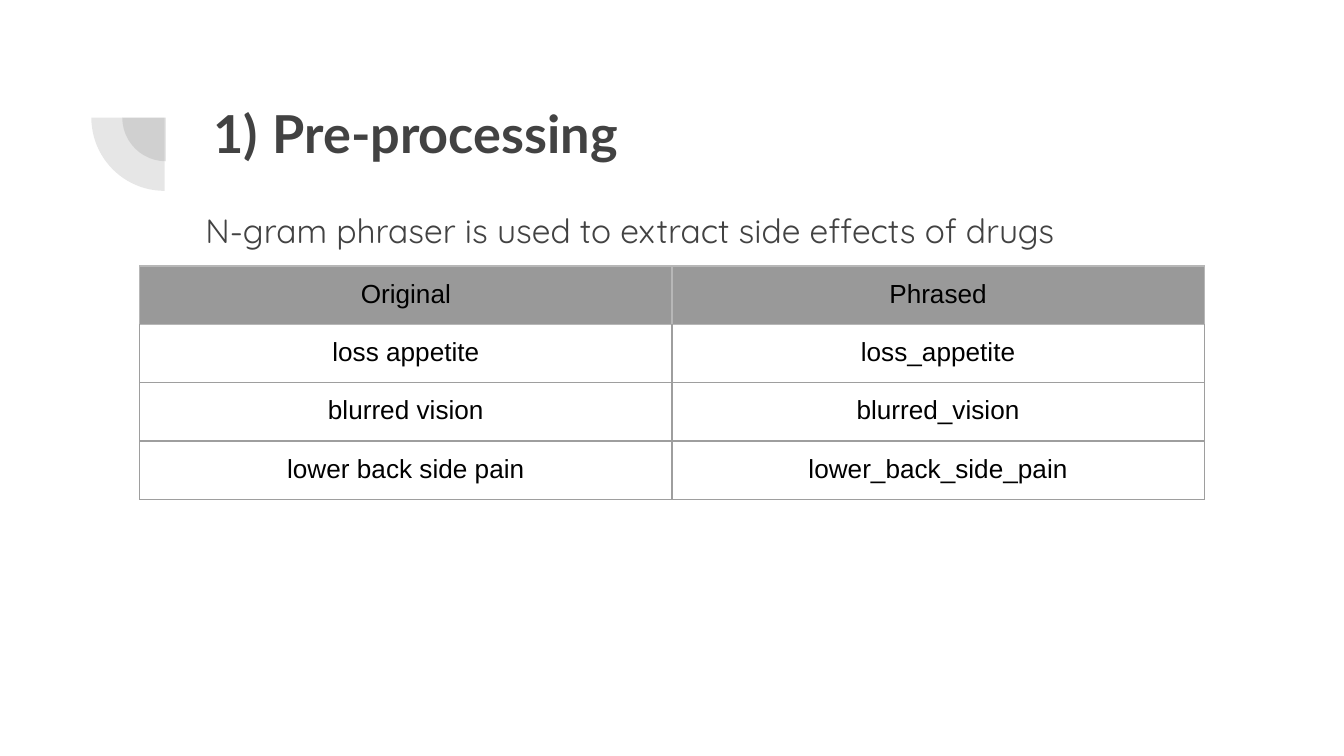
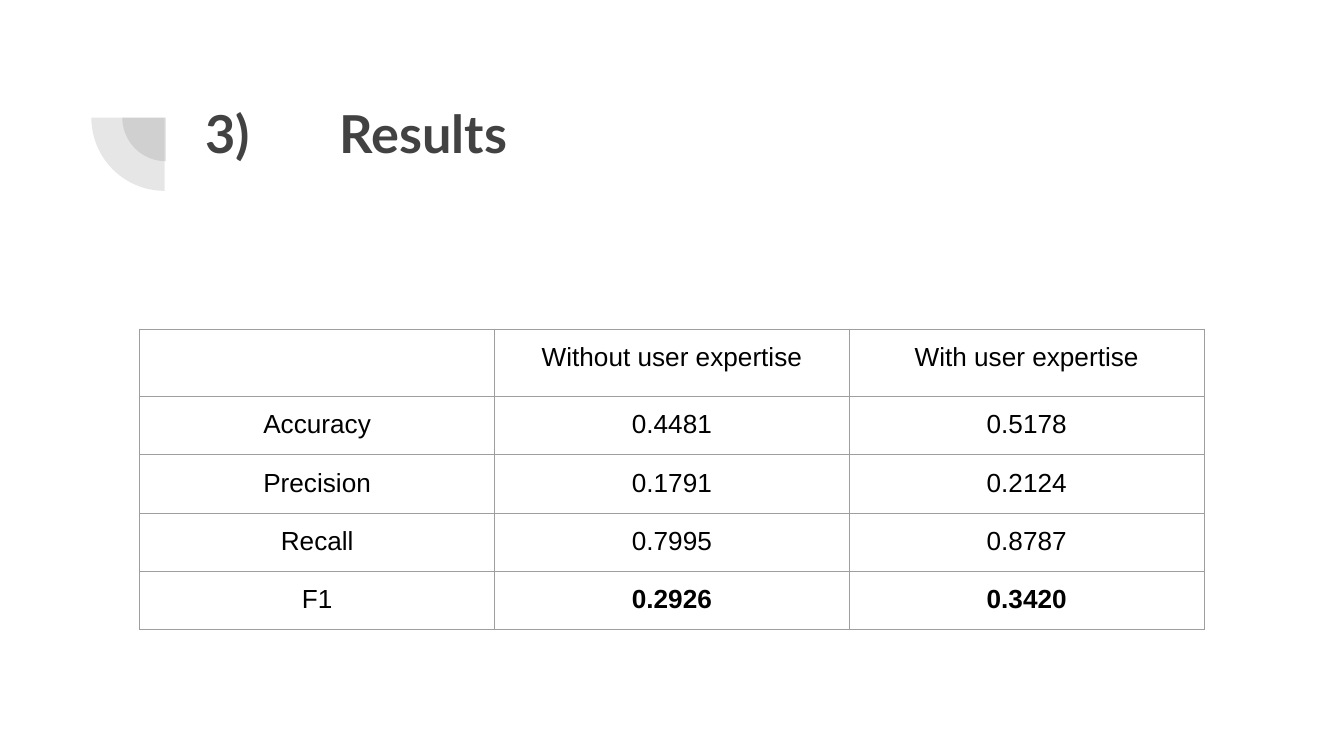
from lxml import etree
from pptx import Presentation
from pptx.dml.color import RGBColor
from pptx.enum.shapes import MSO_SHAPE
from pptx.enum.text import MSO_ANCHOR, PP_ALIGN
from pptx.oxml.ns import qn
from pptx.util import Inches, Pt

PIE = MSO_SHAPE.PIE
TOP = MSO_ANCHOR.TOP
CENTER = PP_ALIGN.CENTER

INK = RGBColor(0x42, 0x42, 0x42)
BLACK = RGBColor(0x00, 0x00, 0x00)
HEADER_FILL = RGBColor(0x99, 0x99, 0x99)
HEADER_BORDER = RGBColor(0xB7, 0xB7, 0xB7)
BORDER = RGBColor(0x9E, 0x9E, 0x9E)

PHRASES = [
    ("Original", "Phrased"),
    ("loss appetite", "loss_appetite"),
    ("blurred vision", "blurred_vision"),
    ("lower back side pain", "lower_back_side_pain"),
]
SCORES = [
    ("", "Without user expertise", "With user expertise"),
    ("Accuracy", "0.4481", "0.5178"),
    ("Precision", "0.1791", "0.2124"),
    ("Recall", "0.7995", "0.8787"),
    ("F1", "0.2926", "0.3420"),
]
BOLD_SCORES = {"0.2926", "0.3420"}

SLIDE_WIDTH = 10
TEXT_LEFT, TEXT_WIDTH = 1.43, 7.69
TABLE_LEFT, TABLE_WIDTH, ROW_HEIGHT = 1.04, 7.92, 5 / 12
TABLE_FONT, TABLE_SIZE, EMPTY_CELL_SIZE = "Arial", 14, 18
INSET = Inches(0.1)
PIES = [(0.91, 0.55, 0.65), (0.68, 0.33, 1.09)]  # left, top, diameter


def set_insets(target):
    """Give a text frame or a table cell the same margin on all sides."""
    target.margin_left = target.margin_right = INSET
    target.margin_top = target.margin_bottom = INSET


def add_run(paragraph, text, size, font_name, color, bold=False):
    run = paragraph.add_run()
    run.text = text
    run.font.size = Pt(size)
    run.font.name = font_name
    run.font.color.rgb = color
    run.font.bold = bold


def add_text(slide, top, height, text, size, font_name, bold=False):
    box = slide.shapes.add_textbox(
        Inches(TEXT_LEFT), Inches(top), Inches(TEXT_WIDTH), Inches(height))
    frame = box.text_frame
    frame.word_wrap = True
    frame.vertical_anchor = TOP
    set_insets(frame)
    paragraph = frame.paragraphs[0]
    add_run(paragraph, text, size, font_name, INK, bold)
    return paragraph


def number_paragraph(paragraph):
    """Number the paragraph 1), with a hanging indent."""
    properties = paragraph._p.get_or_add_pPr()
    properties.set("marL", str(Inches(0.5)))
    properties.set("indent", str(Inches(-0.44)))
    bullet_color = etree.SubElement(properties, qn("a:buClr"))
    etree.SubElement(bullet_color, qn("a:srgbClr"), val=str(INK))
    etree.SubElement(properties, qn("a:buAutoNum"), type="arabicParenR")


def add_tab_stop(paragraph, position):
    properties = paragraph._p.get_or_add_pPr()
    stops = etree.SubElement(properties, qn("a:tabLst"))
    etree.SubElement(stops, qn("a:tab"), pos=str(Inches(position)), algn="l")


def set_end_font(paragraph, size, font_name):
    """Set the font of the paragraph mark, which sets an empty line's height."""
    mark = etree.SubElement(
        paragraph._p, qn("a:endParaRPr"), sz=str(size * 100))
    etree.SubElement(mark, qn("a:latin"), typeface=font_name)


def add_corner_arcs(slide):
    group = slide.shapes.add_group_shape()
    for left, top, diameter in PIES:
        arc = group.shapes.add_shape(
            PIE, Inches(left), Inches(top), Inches(diameter), Inches(diameter))
        arc.adjustments[0], arc.adjustments[1] = 108, 162
        arc.rotation = 270
        arc.shadow.inherit = False
        arc.line.fill.background()
        arc.fill.solid()
        arc.fill.fore_color.rgb = INK
        color = arc._element.spPr.find(qn("a:solidFill"))[0]
        etree.SubElement(color, qn("a:alpha"), val="13000")


def set_borders(cell, side_color, top_color, bottom_color):
    properties = cell._tc.get_or_add_tcPr()
    sides = {"lnL": side_color, "lnR": side_color,
             "lnT": top_color, "lnB": bottom_color}
    for side, color in sides.items():
        line = etree.SubElement(properties, qn(f"a:{side}"), w=str(Pt(0.75)))
        fill = etree.SubElement(line, qn("a:solidFill"))
        etree.SubElement(fill, qn("a:srgbClr"), val=str(color))


def fill_cell(cell, value, fill_color):
    set_insets(cell)
    if fill_color:
        cell.fill.solid()
        cell.fill.fore_color.rgb = fill_color
    else:
        cell.fill.background()
    paragraph = cell.text_frame.paragraphs[0]
    if value:
        paragraph.alignment = CENTER
        add_run(paragraph, value, TABLE_SIZE, TABLE_FONT, BLACK,
                value in BOLD_SCORES)
    set_end_font(paragraph, TABLE_SIZE if value else EMPTY_CELL_SIZE,
                 TABLE_FONT)


def add_table(slide, top, rows, shaded_header=False):
    column_count = len(rows[0])
    table = slide.shapes.add_table(
        len(rows), column_count, Inches(TABLE_LEFT), Inches(top),
        Inches(TABLE_WIDTH), Inches(ROW_HEIGHT * len(rows))).table
    table.first_row = table.horz_banding = False
    for column in table.columns:
        column.width = Inches(TABLE_WIDTH / column_count)
    header_border = HEADER_BORDER if shaded_header else BORDER
    for row_index, values in enumerate(rows):
        table.rows[row_index].height = Inches(ROW_HEIGHT)
        is_header = row_index == 0
        own_border = header_border if is_header else BORDER
        top_border = header_border if row_index <= 1 else BORDER
        fill_color = HEADER_FILL if is_header and shaded_header else None
        for column_index, value in enumerate(values):
            cell = table.cell(row_index, column_index)
            set_borders(cell, own_border, top_border, own_border)
            fill_cell(cell, value, fill_color)


def add_titled_slide(presentation, title):
    """Return a new slide and its title paragraph."""
    slide = presentation.slides.add_slide(presentation.slide_layouts[6])
    add_corner_arcs(slide)
    return slide, add_text(slide, 0.65, 1.09, title, 28, "Lato", bold=True)


def main():
    presentation = Presentation()
    presentation.slide_width = Inches(SLIDE_WIDTH)
    presentation.slide_height = Inches(SLIDE_WIDTH * 9 / 16)

    slide, title = add_titled_slide(presentation, "Pre-processing")
    number_paragraph(title)
    body = add_text(
        slide, 1.42, 3.53,
        "N-gram phraser is used to extract side effects of drugs",
        18, "Quicksand")
    body.line_spacing = 1.15
    add_table(slide, 1.98, PHRASES, shaded_header=True)

    slide, title = add_titled_slide(presentation, "3)\tResults")
    add_tab_stop(title, 1)
    add_table(slide, 2.45, SCORES)

    presentation.save("out.pptx")


if __name__ == "__main__":
    main()
